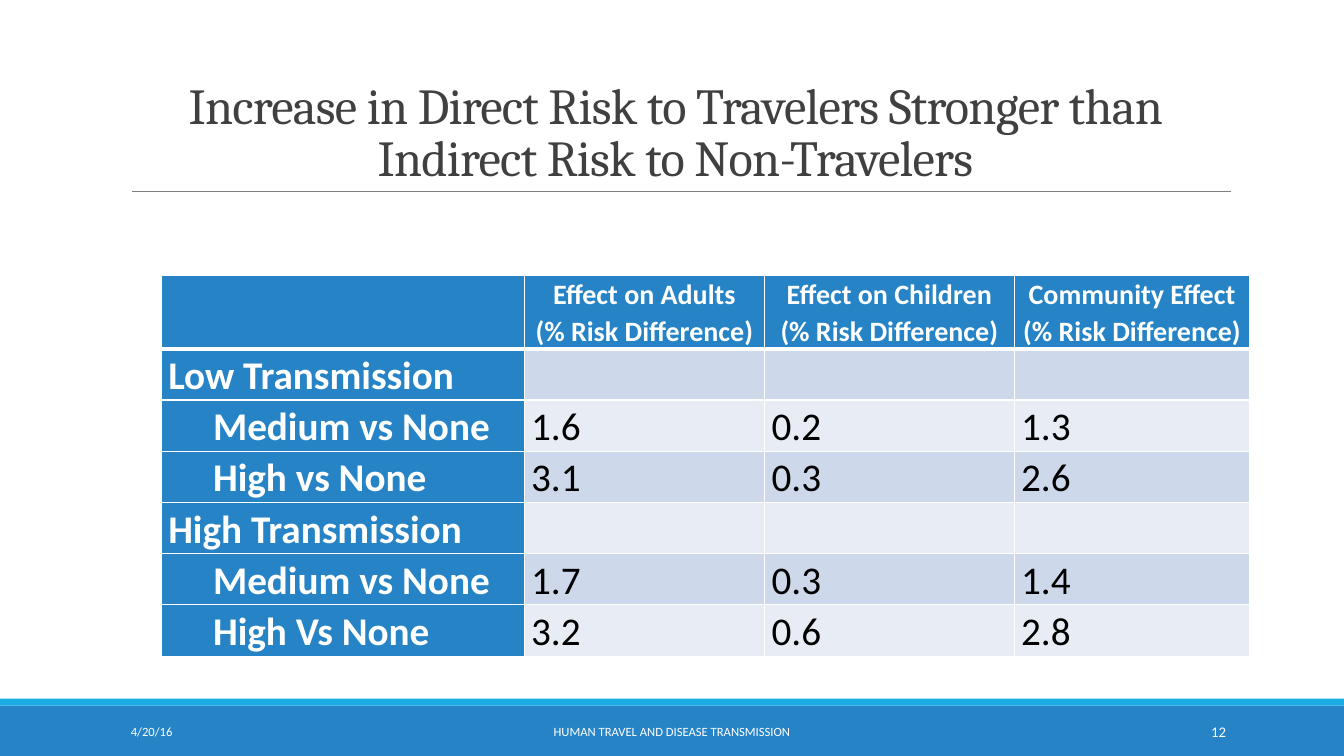
from pptx import Presentation
from pptx.dml.color import RGBColor
from pptx.enum.shapes import MSO_CONNECTOR, MSO_SHAPE
from pptx.enum.text import MSO_ANCHOR, PP_ALIGN
from pptx.oxml import parse_xml
from pptx.oxml.ns import nsdecls
from pptx.util import Pt

THEME = {
    "blue": "2683C6", "cyan": "1CADE4", "rule": "808080", "ink": "404040",
    "white": "FFFFFF", "black": "000000", "bands": ("CDD9EA", "E8EDF5"),
    "head": "Cambria", "body": "Calibri",
    "title": 36, "label": 20, "cell": 28, "foot": 9, "page": 10.5,
}


def add_run(para, text, size, color, font=THEME["body"], bold=False):
    run = para.add_run()
    run.text = text
    run.font.name = font
    run.font.size = Pt(size)
    run.font.bold = bold
    run.font.color.rgb = RGBColor.from_string(color)
    return run


def add_box(left, top, width, height, anchor, align):
    box = slide.shapes.add_textbox(Pt(left), Pt(top), Pt(width), Pt(height))
    frame = box.text_frame
    frame.word_wrap = True
    frame.vertical_anchor = anchor
    para = frame.paragraphs[0]
    para.alignment = align
    return para


deck = Presentation()
deck.slide_width, deck.slide_height = Pt(960), Pt(540)
slide = deck.slides.add_slide(deck.slide_layouts[6])

# Bottom bars
for top, height, color in ((504, 36, THEME["blue"]), (499, 5, THEME["cyan"])):
    bar = slide.shapes.add_shape(MSO_SHAPE.RECTANGLE, 0, Pt(top), Pt(960), Pt(height))
    bar.shadow.inherit = False
    bar.fill.solid()
    bar.fill.fore_color.rgb = RGBColor.from_string(color)
    bar.line.fill.background()

# Title and the rule below it
para = add_box(86.4, 22.3, 792, 114.5, MSO_ANCHOR.BOTTOM, PP_ALIGN.CENTER)
para.line_spacing = 0.85
title = add_run(
    para,
    "Increase in Direct Risk to Travelers Stronger than Indirect Risk to Non-Travelers",
    THEME["title"], THEME["ink"], THEME["head"])
title.font._element.set("spc", "-50")
rule = slide.shapes.add_connector(
    MSO_CONNECTOR.STRAIGHT, Pt(94.3), Pt(136.8), Pt(879), Pt(136.8))
rule.line.color.rgb = RGBColor.from_string(THEME["rule"])
rule.line.width = Pt(0.5)
rule._element.spPr.append(parse_xml(f"<a:effectLst {nsdecls('a')}/>"))

# Footer
for left, width, align, text, size in (
    (86.4, 194.4, PP_ALIGN.LEFT, "4/20/16", THEME["foot"]),
    (290.2, 379.4, PP_ALIGN.CENTER, "HUMAN TRAVEL AND DISEASE TRANSMISSION", THEME["foot"]),
    (779.8, 103, PP_ALIGN.RIGHT, "12", THEME["page"]),
):
    para = add_box(left, 508.3, width, 28.8, MSO_ANCHOR.MIDDLE, align)
    add_run(para, text, size, THEME["white"])

# Risk table: a cell holds a list of paragraphs
unit = "(% Risk Difference)"
rows = [
    ([], ["Effect on Adults", unit], ["Effect on Children", unit], ["Community Effect", unit]),
    (["Low Transmission"], [], [], []),
    (["Medium vs None"], ["1.6"], ["0.2"], ["1.3"]),
    (["High vs None"], ["3.1"], ["0.3"], ["2.6"]),
    (["High Transmission"], [], [], []),
    (["Medium vs None"], ["1.7"], ["0.3"], ["1.4"]),
    (["High Vs None"], ["3.2"], ["0.6"], ["2.8"]),
]
widths = (259.2, 171.8, 178.2, 168.5)
table = slide.shapes.add_table(
    len(rows), len(widths), Pt(115.2), Pt(196.9), Pt(sum(widths)), Pt(272)).table
for col, width in zip(table.columns, widths):
    col.width = Pt(width)

for y, row in enumerate(rows):
    table.rows[y].height = Pt(36.6 if y else 52.2)
    for x, lines in enumerate(row):
        cell = table.cell(y, x)
        strong = y == 0 or x == 0
        child = x == 0 and "None" in "".join(lines)
        cell.margin_left = Pt(37 if child else 5)
        cell.margin_right = Pt(5)
        cell.margin_top = cell.margin_bottom = 0
        fill = THEME["blue"] if strong else THEME["bands"][(y - 1) % 2]
        cell.fill.solid()
        cell.fill.fore_color.rgb = RGBColor.from_string(fill)

        # Cell text
        for i, line in enumerate(lines):
            frame = cell.text_frame
            para = frame.add_paragraph() if i else frame.paragraphs[0]
            para.line_spacing = 1.07
            para.alignment = PP_ALIGN.LEFT if y else PP_ALIGN.CENTER
            add_run(para, line, THEME["cell" if y else "label"],
                    THEME["white" if strong else "black"], bold=strong)

        # White borders, heavier under the header; they precede the fill
        edges = {"lnL": 1, "lnR": 1, "lnT": 3 if y == 1 else 1, "lnB": 1 if y else 3}
        for i, (edge, weight) in enumerate(edges.items()):
            cell._tc.get_or_add_tcPr().insert(i, parse_xml(
                f'<a:{edge} {nsdecls("a")} w="{Pt(weight)}"><a:solidFill>'
                f'<a:srgbClr val="{THEME["white"]}"/></a:solidFill></a:{edge}>'))

deck.save("out.pptx")
